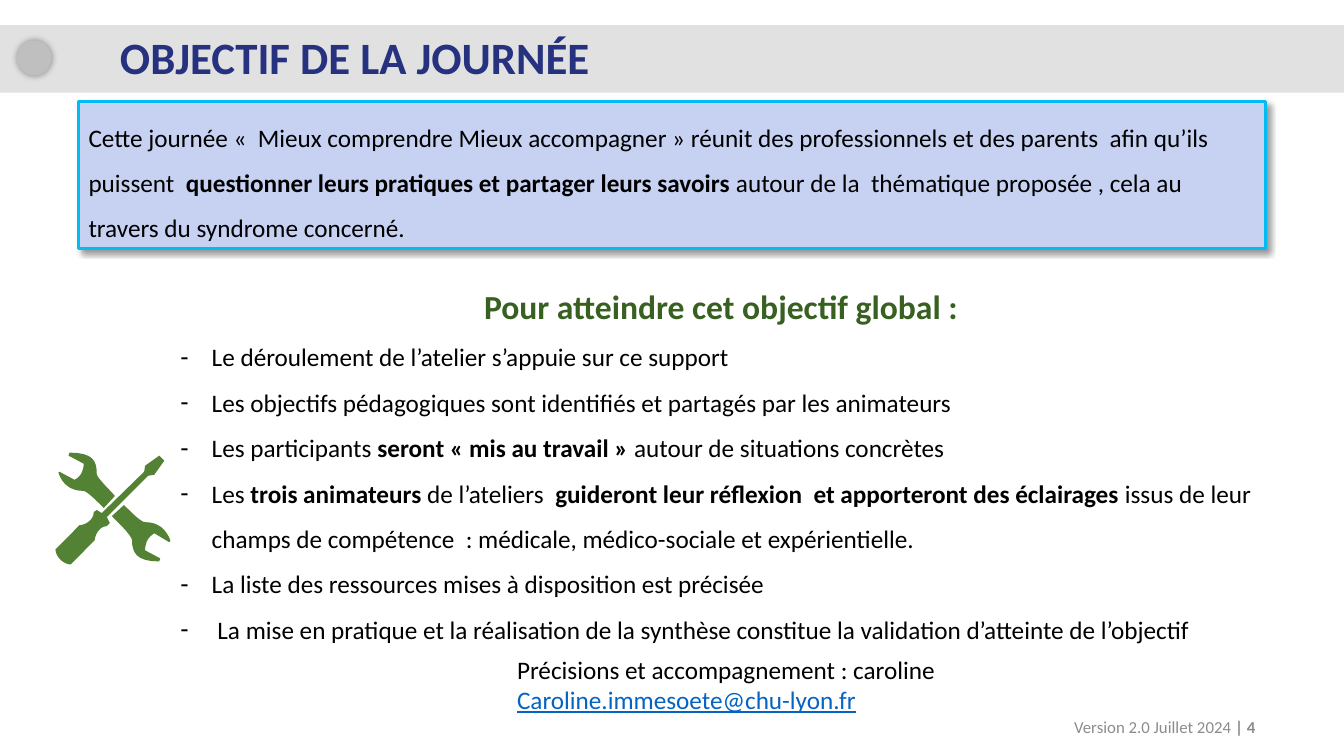
import lxml.etree
import pptx
import pptx.dml.color
import pptx.enum.shapes
import pptx.enum.text
import pptx.oxml.ns
import pptx.util

# Palette
INK, NAVY, GREY = "000000", "263280", "8C8C8C"
GREEN, DARK_GREEN, LINK = "548235", "386021", "0563C1"
SHAPES = pptx.enum.shapes.MSO_SHAPE
ALIGN = pptx.enum.text.PP_ALIGN
ANCHOR = pptx.enum.text.MSO_ANCHOR

# Crossed tools, in hundredths of an inch from the corner of the icon:
# a pair is a straight step, six numbers are a curve
TOOLS = [
    # upper half of the wrench
    [(14, 0), (13, 3), (28, 11), (28, 18, 25, 24, 19, 27), (4, 19), (3, 20),
     (7, 31, 14, 38, 28, 38), (31, 38, 42, 49, 48, 55), (59, 43),
     (54, 37, 41, 25, 41, 21), (41, 8, 37, 0, 14, 0)],
    # screwdriver
    [(103, 3), (89, 13), (88, 19), (46, 60), (41, 57), (38, 59),
     (38, 68, 28, 72, 24, 72), (0, 96), (0, 103, 8, 111, 15, 111), (39, 87),
     (39, 83, 43, 73, 51, 73), (54, 70), (51, 64), (92, 23), (98, 22), (108, 8)],
    # lower half of the wrench
    [(68, 52), (56, 63), (65, 72, 76, 83, 76, 87), (76, 99, 80, 108, 103, 108),
     (104, 105), (89, 97), (89, 89, 92, 84, 98, 80), (113, 89), (114, 87),
     (110, 77, 103, 69, 89, 69), (85, 69, 76, 60, 68, 52)],
]


def colour(value):
    return pptx.dml.color.RGBColor.from_string(value)


def write(para, text, size=18, color=INK, bold=False, underline=False,
          align=ALIGN.LEFT, spacing=1.0, bullet=None, indent=0):
    """Fill a paragraph; parts between ** marks are bold."""
    para.alignment, para.line_spacing = align, spacing
    para.space_before = para.space_after = pptx.util.Pt(0)
    properties = para._p.get_or_add_pPr()
    properties.set("marL", str(int(indent)))
    properties.set("indent", str(int(-indent)))
    mark = lxml.etree.SubElement(
        properties, pptx.oxml.ns.qn("a:buChar" if bullet else "a:buNone"))
    if bullet:
        mark.set("char", bullet)
    for index, part in enumerate(text.split("**")):
        if part:
            span = para.add_run()
            span.text = part
            span.font.name, span.font.size = "Calibri", pptx.util.Pt(size)
            span.font.bold = bold or index % 2 == 1
            span.font.underline = underline
            span.font.color.rgb = colour(color)


def trace(contour, steps=8):
    """Turn a contour with curves into points in thousandths of an inch."""
    points = []
    for step in contour:
        if len(step) == 2:
            points.append((step[0] * 10, step[1] * 10))
            continue
        x0, y0 = points[-1]
        x1, y1, x2, y2, x3, y3 = (10 * value for value in step)
        for t in (k / steps for k in range(1, steps + 1)):
            a, b, c, d = (1 - t) ** 3, 3 * t * (1 - t) ** 2, 3 * t * t * (1 - t), t ** 3
            points.append((a * x0 + b * x1 + c * x2 + d * x3,
                           a * y0 + b * y1 + c * y2 + d * y3))
    return points


class SlideMaker:
    """Places elements on a grid with ten columns and ten rows to the inch."""

    cell = pptx.util.Inches(0.1)

    def __init__(self, deck):
        self.slide = deck.slides.add_slide(deck.slide_layouts[1])
        self.shapes = self.slide.shapes

    def grid(self, *cells):
        return [pptx.util.Emu(round(count * self.cell)) for count in cells]

    def fill_text(self, box, lines, anchor):
        frame = box.text_frame
        frame.word_wrap = True
        frame.auto_size = pptx.enum.text.MSO_AUTO_SIZE.NONE
        frame.vertical_anchor = anchor
        for index, (text, style) in enumerate(lines):
            para = frame.add_paragraph() if index else frame.paragraphs[0]
            write(para, text, **style)

    def placeholder(self, index, place, lines, anchor=ANCHOR.TOP):
        box = self.slide.placeholders[index]
        box.left, box.top, box.width, box.height = self.grid(*place)
        self.shapes._spTree.append(box._element)  # bring to the front
        self.fill_text(box, lines, anchor)

    def text(self, place, lines, anchor=ANCHOR.TOP):
        self.fill_text(self.shapes.add_textbox(*self.grid(*place)), lines, anchor)

    def paint(self, shape, fill, line=None, width=0):
        shape.shadow.inherit = False
        shape.fill.solid()
        shape.fill.fore_color.rgb = colour(fill)
        if line:
            shape.line.color.rgb = colour(line)
            shape.line.width = pptx.util.Pt(width)
        else:
            shape.line.fill.background()

    def panel(self, kind, place, fill, line=None, width=0, shadow=None, lines=()):
        shape = self.shapes.add_shape(kind, *self.grid(*place))
        self.paint(shape, fill, line, width)
        if shadow:
            self.cast_shadow(shape, *shadow)
        self.fill_text(shape, lines, ANCHOR.TOP)

    def cast_shadow(self, shape, blur, distance, angle):
        qn = pptx.oxml.ns.qn
        effects = shape._element.spPr.find(qn("a:effectLst"))
        outer = lxml.etree.SubElement(
            effects, qn("a:outerShdw"), blurRad=str(pptx.util.Pt(blur)),
            dist=str(pptx.util.Pt(distance)), dir=str(angle * 60000),
            algn="ctr" if not distance else "tl", rotWithShape="0")
        tint = lxml.etree.SubElement(outer, qn("a:srgbClr"), val=INK)
        lxml.etree.SubElement(tint, qn("a:alpha"), val="40000")

    def icon(self, place, contours, fill):
        builder = None
        for contour in contours:
            start, *rest = trace(contour)
            if builder is None:
                builder = self.shapes.build_freeform(*start, scale=914.4)
            else:
                builder.move_to(*start)
            builder.add_line_segments(rest, close=True)
        self.paint(builder.convert_to_shape(*self.grid(*place)), fill)


def main():
    deck = pptx.Presentation()
    deck.slide_width, deck.slide_height = pptx.util.Inches(13.33), pptx.util.Inches(7.5)
    page = SlideMaker(deck)

    # Title band
    page.panel(SHAPES.RECTANGLE, (0, 2.5, 133.3, 6.7), "E1E1E1")
    page.panel(SHAPES.OVAL, (1.7, 4, 3.4, 3.5), "BFBFBF", shadow=(5, 0, 0))
    page.placeholder(0, (10.9, 3, 87.4, 5.9), [
        ("OBJECTIF DE LA JOURNÉE", dict(size=32, color=NAVY, bold=True, spacing=0.9)),
    ], ANCHOR.MIDDLE)

    # Version and page number
    page.text((95.5, 70.1, 30, 4), [
        ("Version 2.0 Juillet 2024 **| 4**", dict(size=12, color=GREY, align=ALIGN.RIGHT)),
    ], ANCHOR.MIDDLE)

    # Overall aim
    page.panel(
        SHAPES.RECTANGLE, (7.8, 10.1, 117.7, 14.6), "C7D1F2", "00BCF2", 2.25, (4, 3, 45),
        [("Cette journée «  Mieux comprendre Mieux accompagner » réunit des professionnels "
          "et des parents  afin qu’ils puissent  **questionner leurs pratiques et partager "
          "leurs savoirs** autour de la  thématique proposée , cela au travers du syndrome "
          "concerné.", dict(spacing=1.5))])

    # Means of reaching it
    item = dict(spacing=1.5, bullet="-", indent=pptx.util.Inches(0.31))
    means = [
        "Le déroulement de l’atelier s’appuie sur ce support",
        "Les objectifs pédagogiques sont identifiés et partagés par les animateurs",
        "Les participants **seront « mis au travail » **autour de situations concrètes",
        "Les **trois animateurs **de l’ateliers  **guideront leur réflexion  et apporteront "
        "des éclairages **issus de leur champs de compétence  : médicale, médico-sociale "
        "et expérientielle.",
        "La liste des ressources mises à disposition est précisée",
        " La mise en pratique et la réalisation de la synthèse constitue la validation "
        "d’atteinte de l’objectif",
    ]
    heading = ("Pour atteindre cet objectif global :", dict(
        size=24, color=DARK_GREEN, bold=True, align=ALIGN.CENTER, spacing=1.5))
    page.placeholder(1, (16.9, 25.9, 109.2, 38.5),
                     [heading] + [(text, item) for text in means])
    page.icon((5.5, 44.9), TOOLS, GREEN)

    # Contact
    page.text((50.3, 64.4, 59.3, 7.1), [
        ("Précisions et accompagnement : caroline", {}),
        ("Caroline.immesoete@chu-lyon.fr", dict(color=LINK, underline=True)),
    ])
    deck.save("out.pptx")


if __name__ == "__main__":
    main()
